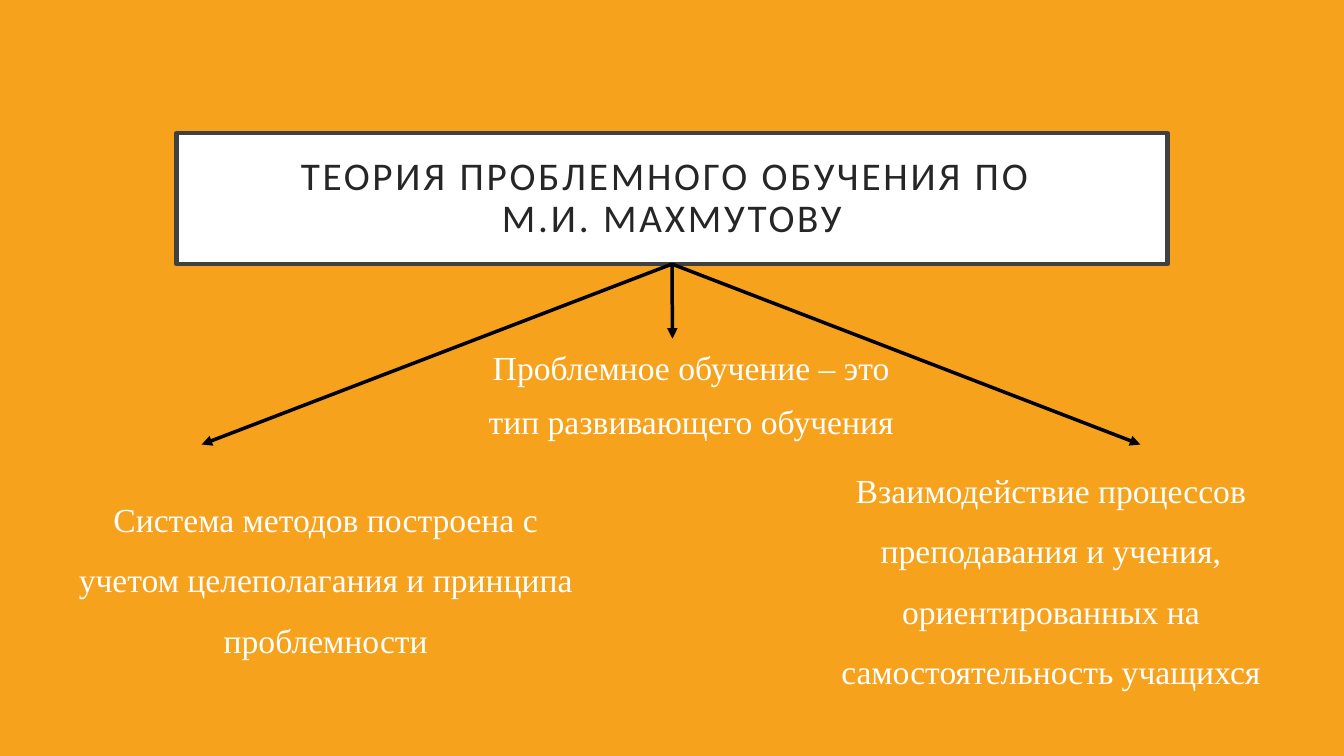
from lxml.etree import SubElement
from pptx import Presentation
from pptx.dml.color import RGBColor
from pptx.enum.shapes import MSO_CONNECTOR
from pptx.enum.text import MSO_ANCHOR, MSO_AUTO_SIZE, PP_ALIGN
from pptx.oxml.ns import qn
from pptx.util import Inches, Pt

ORANGE = RGBColor(0xF6, 0xA2, 0x1D)
WHITE = RGBColor(0xFF, 0xFF, 0xFF)
FRAME_GRAY = RGBColor(0x40, 0x40, 0x40)
TITLE_GRAY = RGBColor(0x26, 0x26, 0x26)
BLACK = RGBColor(0x00, 0x00, 0x00)

TITLE_BOX = (1.75, 1.32, 9.83, 1.3)
TITLE_LINES = ["ТЕОРИЯ ПРОБЛЕМНОГО ОБУЧЕНИЯ ПО ", "М.И. МАХМУТОВУ"]
THESES = [
    ((0.49, 4.7, 5.48, 1.85), 1.5, 0,
     ["Система методов построена с учетом целеполагания и принципа проблемности"]),
    ((3.5, 3.36, 6.71, 1.06), 1.07, 8,
     [" Проблемное обучение – это ", "тип развивающего обучения"]),
    ((7.11, 4.41, 6.71, 2.46), 1.5, 0,
     ["Взаимодействие процессов ", "преподавания и учения, ",
      "ориентированных на ", "самостоятельность учащихся "]),
]
ARROW_TIPS = [(6.67, 3.36), (2, 4.41), (11.31, 4.41)]


def add_styled_run(paragraph, text, font_name, size, color):
    """Append one run with its font, size and colour."""
    run = paragraph.add_run()
    run.text = text
    run.font.name = font_name
    run.font.size = Pt(size)
    run.font.color.rgb = color
    return run


def place_title(slide, box):
    """Turn the title placeholder into the framed heading and return it."""
    heading = slide.shapes.title
    heading.left, heading.top, heading.width, heading.height = map(Inches, box)
    heading.fill.solid()
    heading.fill.fore_color.rgb = WHITE
    heading.line.color.rgb = FRAME_GRAY
    heading.line.width = Pt(3)
    frame = heading.text_frame
    frame.word_wrap = True
    frame.auto_size = MSO_AUTO_SIZE.NONE
    frame.vertical_anchor = MSO_ANCHOR.MIDDLE
    frame.margin_left = frame.margin_right = Inches(0.3)
    frame.margin_top = frame.margin_bottom = Inches(0.2)
    paragraph = frame.paragraphs[0]
    paragraph.alignment = PP_ALIGN.CENTER
    paragraph.line_spacing = 0.9
    for index, line in enumerate(TITLE_LINES):
        if index:
            paragraph.add_line_break()
        run = add_styled_run(paragraph, line, "Calibri", 28, TITLE_GRAY)
        run.font._element.set("spc", "200")
    return heading


def add_thesis(slide, box, line_spacing, space_after, lines):
    """Place one centred statement in its box."""
    frame = slide.shapes.add_textbox(*map(Inches, box)).text_frame
    frame.word_wrap = True
    frame.auto_size = MSO_AUTO_SIZE.SHAPE_TO_FIT_TEXT
    for index, line in enumerate(lines):
        paragraph = frame.add_paragraph() if index else frame.paragraphs[0]
        paragraph.alignment = PP_ALIGN.CENTER
        paragraph.line_spacing = line_spacing
        paragraph.space_after = Pt(space_after)
        add_styled_run(paragraph, line, "Times New Roman", 24, WHITE)


def add_arrow(slide, heading, tip):
    """Draw an arrow from the bottom middle of the heading to the tip."""
    tip_x, tip_y = map(Inches, tip)
    arrow = slide.shapes.add_connector(
        MSO_CONNECTOR.STRAIGHT, heading.left + heading.width // 2,
        heading.top + heading.height, tip_x, tip_y)
    arrow.begin_connect(heading, 2)
    arrow.line.color.rgb = BLACK
    arrow.line.width = Pt(2.5)
    SubElement(arrow.line._get_or_add_ln(), qn("a:tailEnd"), type="triangle")
    SubElement(arrow._element.spPr, qn("a:effectLst"))


def build_theory_slide(presentation):
    """Build the heading with its three branching statements."""
    slide = presentation.slides.add_slide(presentation.slide_layouts[5])
    slide.background.fill.solid()
    slide.background.fill.fore_color.rgb = ORANGE
    heading = place_title(slide, TITLE_BOX)
    for thesis in THESES:
        add_thesis(slide, *thesis)
    for tip in ARROW_TIPS:
        add_arrow(slide, heading, tip)


def main():
    """Create and save the presentation."""
    presentation = Presentation()
    presentation.slide_width = Inches(13.33)
    presentation.slide_height = Inches(7.5)
    build_theory_slide(presentation)
    presentation.save("out.pptx")


if __name__ == "__main__":
    main()
